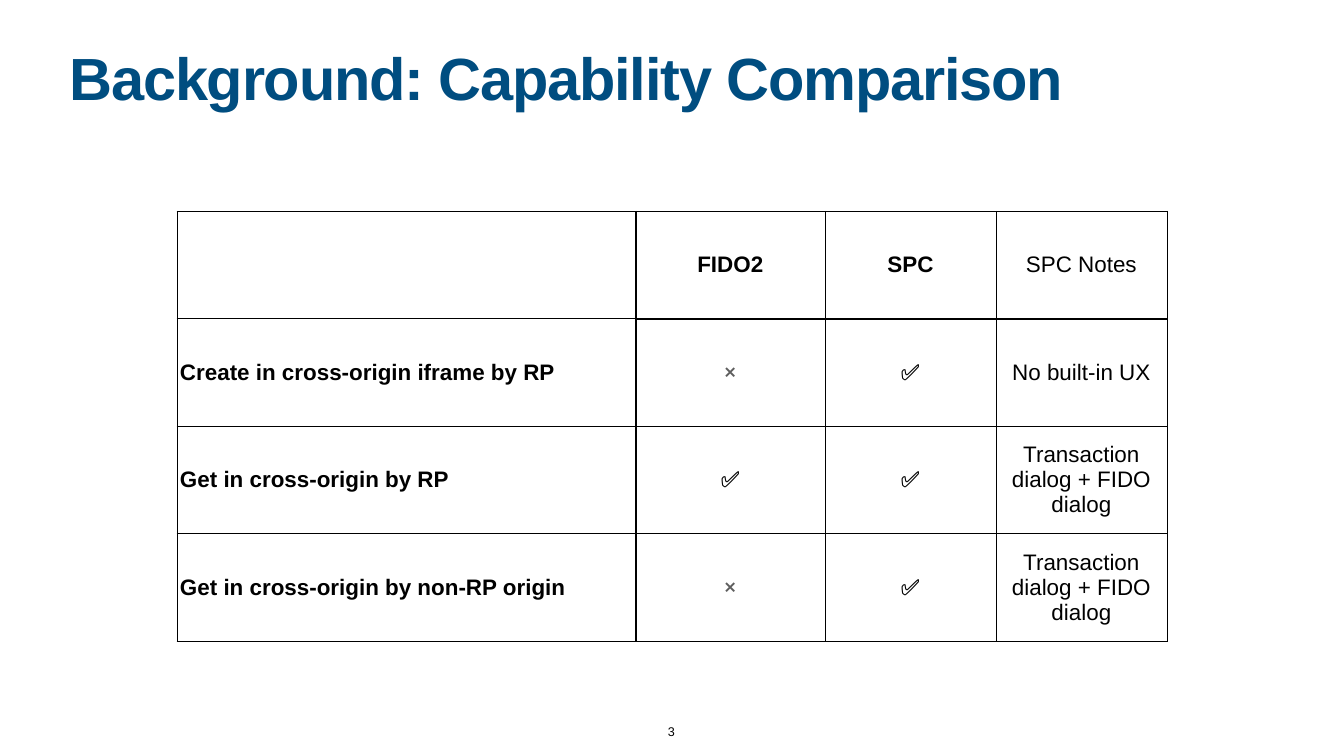
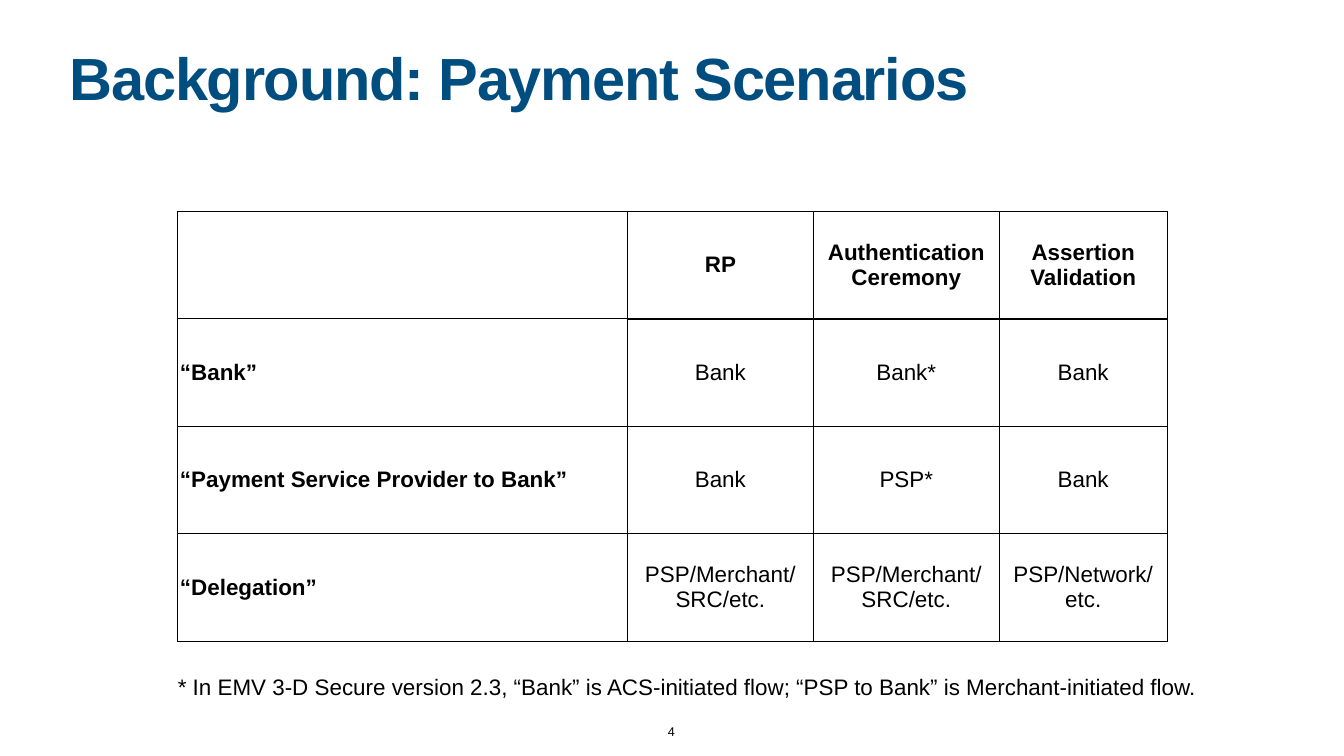
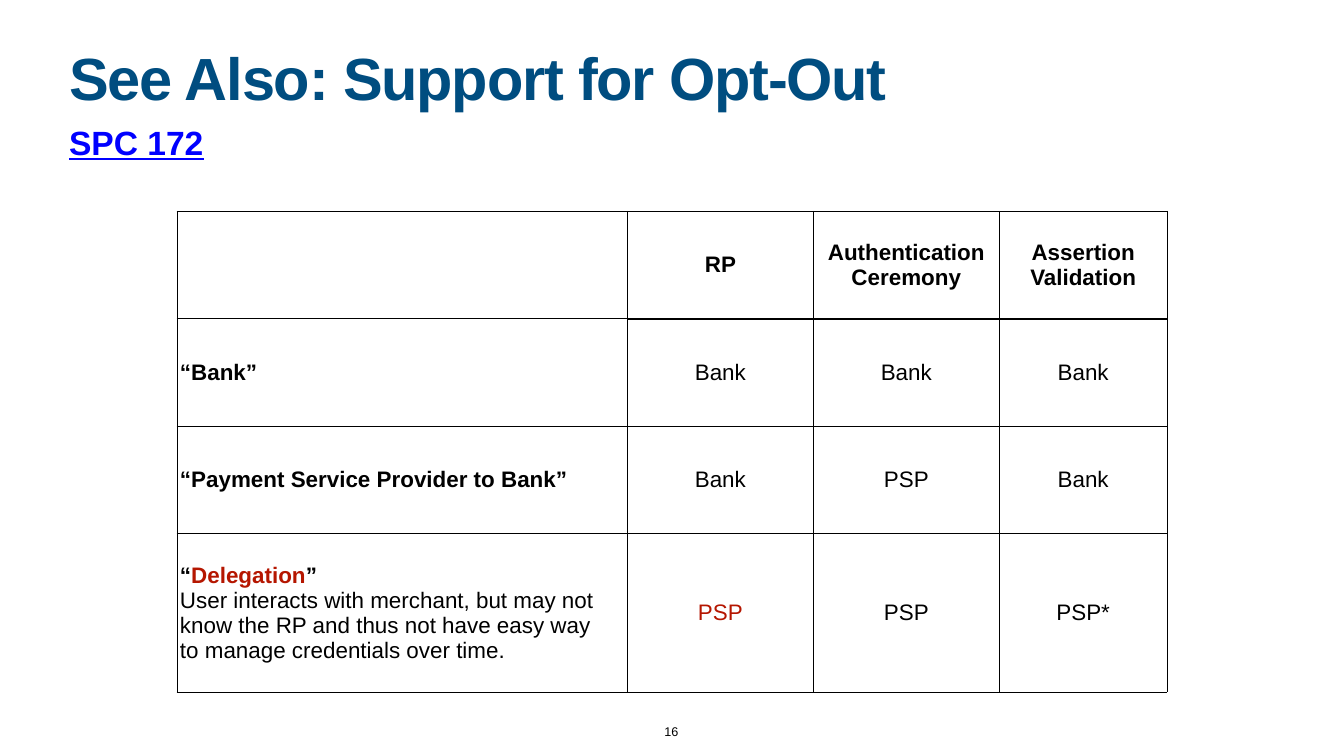
"""Build three slides that compare payment sign-in options in tables."""
from lxml.etree import SubElement
from pptx import Presentation
from pptx.dml.color import RGBColor
from pptx.enum.text import MSO_ANCHOR, MSO_AUTO_SIZE, PP_ALIGN
from pptx.oxml.ns import qn
from pptx.util import Cm, Pt

FONT = "Arial"
COLORS = {"title": "004D80", "text": "000000", "cross": "5E5E5E",
          "red": "B51600", "link": "0000FF", "page": "FFFFFF"}
PAD = 0.15
ROW = 5.42
TABLE = (8.92, 10.64)
THIN, THICK = 1, 3

CROSS = [[("❌", {"size": 24, "color": "cross"})]]
HEADS = ["", "RP", "Authentication Ceremony", "Assertion Validation"]
WIDE = [22.7, 9.37, 9.37, 8.46]
DIALOG = "Transaction dialog + FIDO dialog"
RISK = [
    [("“", {}), ("Delegation", {"color": "red"}), ("”", {})],
    [("User interacts with merchant, but may not\n"
      "know the RP and thus not have easy way\n"
      "to manage credentials over time.", {"bold": False})],
]

SLIDES = [
    {"title": "Background: Capability Comparison", "page": "3",
     "cols": [23.11, 9.55, 8.61, 8.61], "last": ROW,
     "rows": [
         ["", "FIDO2", "SPC", [[("SPC Notes", {"bold": False})]]],
         ["Create in cross-origin iframe by RP", CROSS, "✅", "No built-in UX"],
         ["Get in cross-origin by RP", "✅", "✅", DIALOG],
         ["Get in cross-origin by non-RP origin", CROSS, "✅", DIALOG]]},
    {"title": "Background: Payment Scenarios", "page": "4",
     "cols": WIDE, "last": ROW,
     "rows": [
         HEADS,
         ["“Bank”", "Bank", "Bank*", "Bank"],
         ["“Payment Service Provider to Bank”", "Bank", "PSP*", "Bank"],
         ["“Delegation”", "PSP/Merchant/SRC/etc.", "PSP/Merchant/SRC/etc.",
          "PSP/Network/etc."]],
     "note": "* In EMV 3-D Secure version 2.3, “Bank” is ACS-initiated flow; "
             "“PSP to Bank” is Merchant-initiated flow."},
    {"title": "See Also: Support for Opt-Out", "page": "16",
     "cols": WIDE, "last": 7.98,
     "rows": [
         HEADS,
         ["“Bank”", "Bank", "Bank", "Bank"],
         ["“Payment Service Provider to Bank”", "Bank", "PSP", "Bank"],
         [RISK, [[("PSP", {"color": "red"})]], "PSP", "PSP*"]],
     "link": "SPC 172"},
]


def add_run(para, text, size=32, color="text", bold=False, line=False, track=0):
    for num, part in enumerate(text.split("\n")):
        if num:
            para.add_line_break()
        run = para.add_run()
        run.text = part
        font = run.font
        font.name, font.size, font.bold = FONT, Pt(size), bold
        font.color.rgb = RGBColor.from_string(COLORS[color])
        if line:
            font.underline = True
        if track:
            run._r.get_or_add_rPr().set("spc", str(track))


def add_text(slide, box, text, anchor=MSO_ANCHOR.TOP, align=PP_ALIGN.LEFT,
             space=None, before=None, grow=False, pad=PAD, **style):
    frame = slide.shapes.add_textbox(*map(Cm, box)).text_frame
    frame.word_wrap = not grow
    frame.auto_size = (MSO_AUTO_SIZE.SHAPE_TO_FIT_TEXT if grow
                       else MSO_AUTO_SIZE.NONE)
    frame.vertical_anchor = anchor
    frame.margin_left = frame.margin_right = Cm(pad)
    frame.margin_top = frame.margin_bottom = Cm(pad)
    para = frame.paragraphs[0]
    para.alignment = align
    if space:
        para.line_spacing = space
    if before:
        para.space_before = Pt(before)
    add_run(para, text, **style)


def add_edges(cell, row, col):
    sides = {"lnL": col == 1, "lnR": col == 0,
             "lnT": row == 1 and col > 0, "lnB": row == 0 and col > 0}
    props = cell._tc.get_or_add_tcPr()
    for tag, thick in sides.items():
        width = Pt(THICK if thick else THIN)
        edge = SubElement(props, qn("a:" + tag), w=str(width))
        fill = SubElement(edge, qn("a:solidFill"))
        SubElement(fill, qn("a:srgbClr"), val=COLORS["text"])


def fill_cell(cell, item, row, col):
    add_edges(cell, row, col)
    cell.fill.background()
    cell.vertical_anchor = MSO_ANCHOR.MIDDLE
    cell.margin_left = cell.margin_right = Cm(PAD)
    cell.margin_top = cell.margin_bottom = Cm(PAD)
    if not item:
        return
    paras = [[(item, {})]] if isinstance(item, str) else item
    frame = cell.text_frame
    for num, runs in enumerate(paras):
        para = frame.add_paragraph() if num else frame.paragraphs[0]
        para.alignment = PP_ALIGN.CENTER if col else PP_ALIGN.LEFT
        for text, style in runs:
            add_run(para, text, **{"bold": row == 0 or col == 0, **style})


def add_grid(slide, data):
    rows, cols = data["rows"], data["cols"]
    highs = [ROW] * (len(rows) - 1) + [data["last"]]
    size = (sum(cols), sum(highs))
    grid = slide.shapes.add_table(len(rows), len(cols),
                                  *map(Cm, TABLE + size)).table
    grid.first_row = grid.horz_banding = False
    for col, width in zip(grid.columns, cols):
        col.width = Cm(width)
    for row, high in zip(grid.rows, highs):
        row.height = Cm(high)
    for r, items in enumerate(rows):
        for c, item in enumerate(items):
            fill_cell(grid.cell(r, c), item, r, c)


def add_slide(deck, data):
    slide = deck.slides.add_slide(deck.slide_layouts[6])
    back = slide.background.fill
    back.solid()
    back.fore_color.rgb = RGBColor.from_string(COLORS["page"])
    add_text(slide, (3.35, 2.6, 61.04, 3.99), data["title"], space=0.8,
             size=85, color="title", bold=True, track=-170)
    width = 0.32 + 0.38 * len(data["page"])
    add_text(slide, (33.84 - width / 2, 36.35, width, 1.04), data["page"],
             anchor=MSO_ANCHOR.BOTTOM, align=PP_ALIGN.CENTER, grow=True, size=18)
    add_grid(slide, data)
    if "note" in data:
        add_text(slide, (8.81, 33.78, 52.48, 1.6), data["note"],
                 anchor=MSO_ANCHOR.MIDDLE, grow=True)
    if "link" in data:
        add_text(slide, (3.35, 6.22, 61.04, 2.59), data["link"], space=0.9,
                 before=45, pad=0.13, size=48, color="link", bold=True, line=True)


def main():
    deck = Presentation()
    deck.slide_width, deck.slide_height = Cm(67.73), Cm(38.1)
    for data in SLIDES:
        add_slide(deck, data)
    deck.save("out.pptx")


if __name__ == "__main__":
    main()
